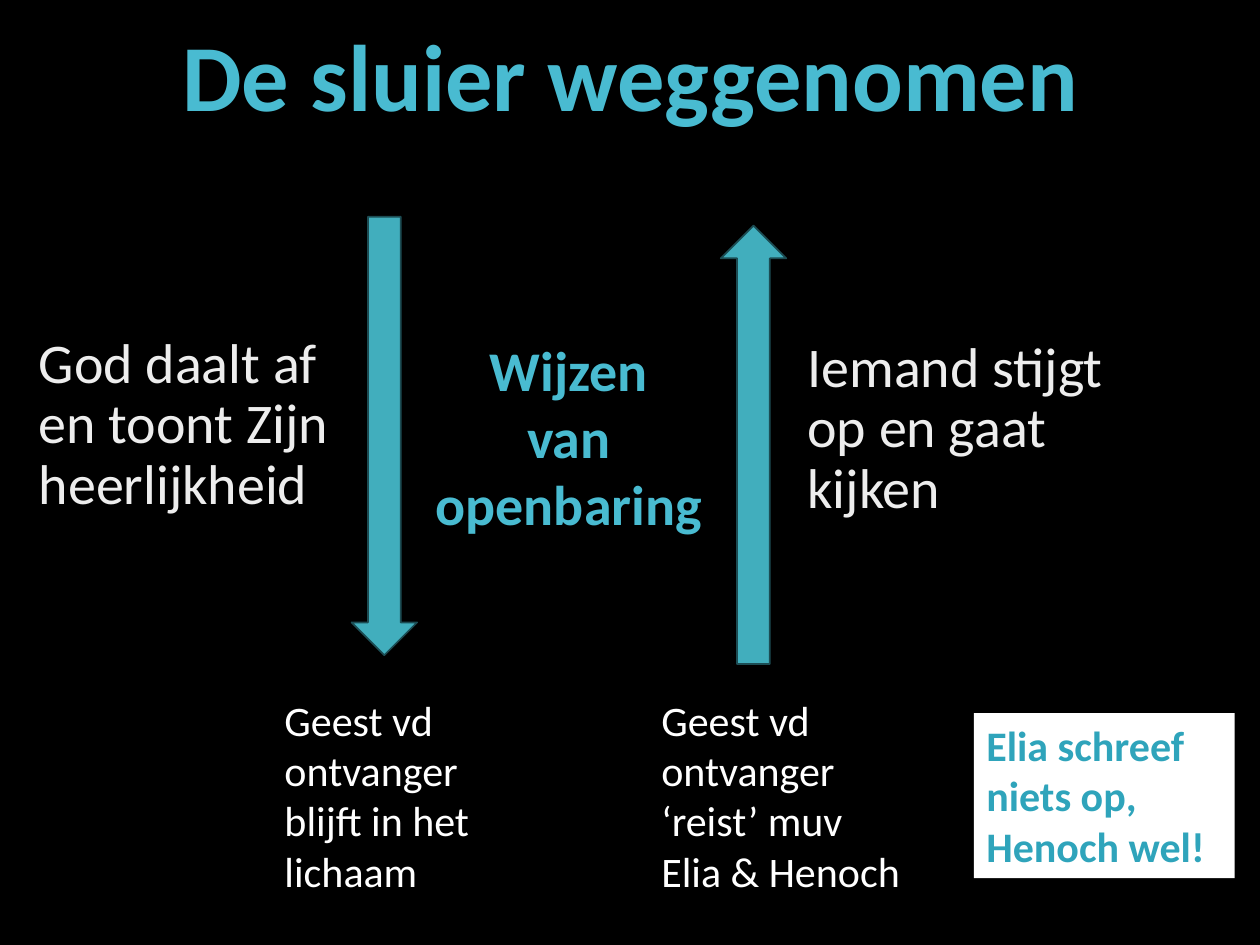
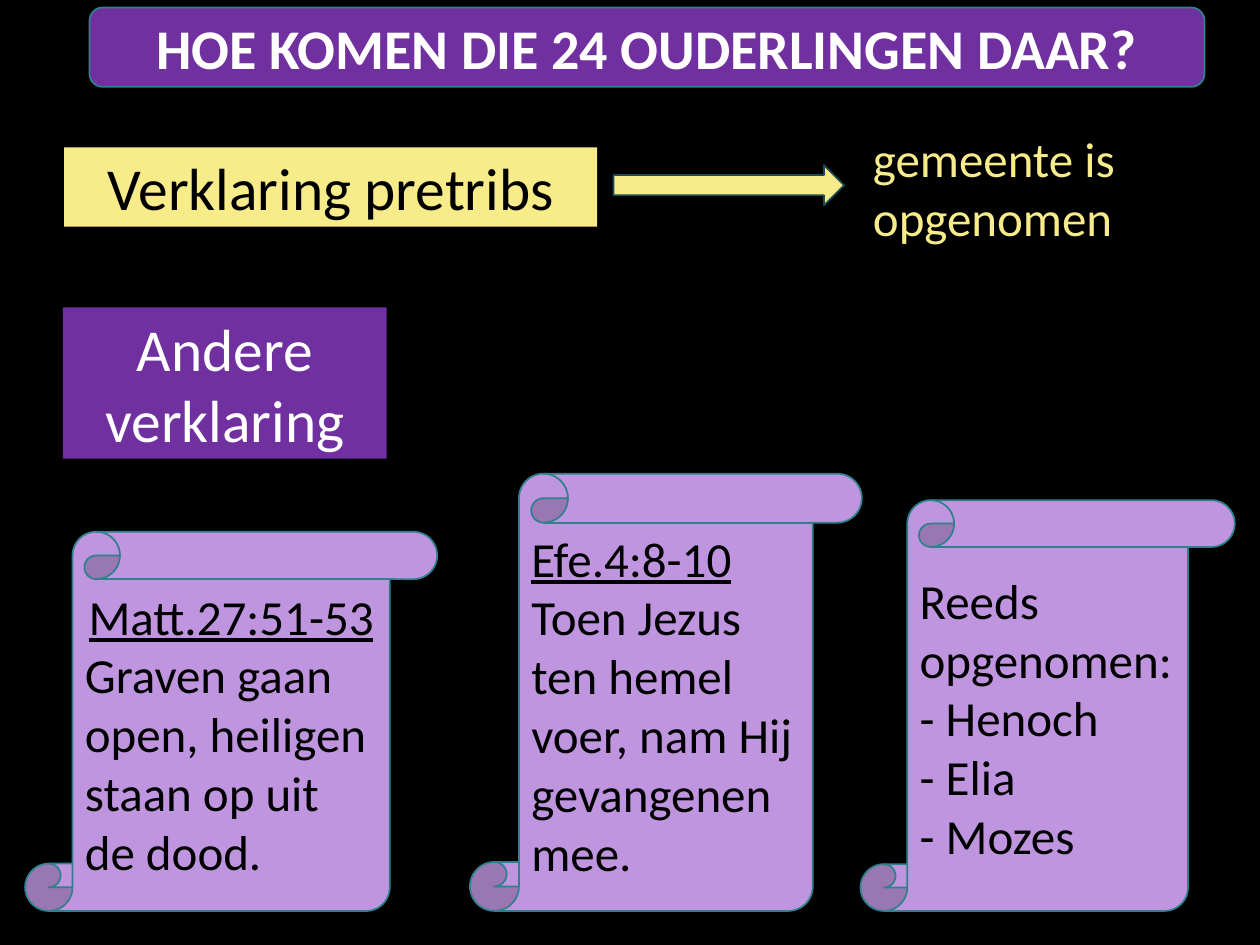
from pptx import Presentation
from pptx.dml.color import RGBColor
from pptx.enum.shapes import MSO_SHAPE as SHAPE
from pptx.enum.text import MSO_ANCHOR, PP_ALIGN
from pptx.util import Inches, Pt

LEFT, CENTER = PP_ALIGN.LEFT, PP_ALIGN.CENTER
TOP, MIDDLE = MSO_ANCHOR.TOP, MSO_ANCHOR.MIDDLE
FONT = "Calibri"
BLACK, WHITE, PALE = "000000", "FFFFFF", "EDEDED"
AQUA, TEAL, DEEP = "49BBD1", "41AEBD", "2FA4BB"
EDGE, RIM = "1C4C53", "30818C"
PURPLE, LILAC, YELLOW = "7030A0", "BF95DF", "F8EB89"

# Places are left, top, width, height in inches.
VEIL = "De sluier weggenomen"
WAYS = [
    ((0.21, 2.61, 2.84, 1.72), ["God daalt af en toont Zijn heerlijkheid"]),
    ((6.31, 2.64, 2.81, 1.78), ["Iemand stijgt op en gaat kijken"]),
]
SPIRITS = [
    ((2.16, 5.46, 1.77, 1.72), ["Geest vd ontvanger blijft in het lichaam"]),
    ((5.15, 5.46, 2.18, 1.72), ["Geest vd ontvanger ‘reist’ muv Elia & Henoch"]),
]
ARROWS = [
    (SHAPE.DOWN_ARROW, (2.79, 1.72, 0.52, 3.48)),
    (SHAPE.UP_ARROW, (5.72, 1.79, 0.52, 3.48)),
]
CORE = ["Wijzen", "van", "openbaring"]
NOTE = ["Elia schreef niets op,", "Henoch wel!"]

ELDERS = "HOE KOMEN DIE 24 OUDERLINGEN DAAR?"
BAND = (0.71, 0.06, 8.85, 0.63)
VIEWS = [
    ((0.51, 1.17, 4.23, 0.63), ["Verklaring pretribs"], YELLOW, BLACK),
    ((0.5, 2.44, 2.57, 1.2), ["Andere verklaring"], PURPLE, WHITE),
]
# Place, verse, alignment of the verse, lines
SCROLLS = [
    ((0.2, 4.22, 3.27, 3.01), "Matt.27:51-53", CENTER,
     ["Graven gaan open, heiligen staan op uit de dood."]),
    ((3.73, 3.76, 3.11, 3.47), "Efe.4:8-10", LEFT,
     ["Toen Jezus ten hemel voer, nam Hij gevangenen mee."]),
    ((6.83, 3.97, 2.97, 3.26), None, LEFT,
     ["Reeds", "opgenomen:", "- Henoch", "- Elia", "- Mozes"]),
]


def rgb(code):
    return RGBColor.from_string(code)


def write(shape, lines, size, color, bold=False, align=LEFT, anchor=TOP,
          space=None, after=0):
    frame = shape.text_frame
    frame.word_wrap = True
    frame.vertical_anchor = anchor
    for i, line in enumerate(lines):
        par = frame.paragraphs[0] if i == 0 else frame.add_paragraph()
        par.alignment = align
        par.space_after = Pt(after)
        if space:
            par.line_spacing = space
        font_run = par.add_run()
        font_run.text = line
        font = font_run.font
        font.name, font.size, font.bold = FONT, Pt(size), bold
        font.color.rgb = rgb(color)
    return shape


def label(slide, place, lines, size, color, **style):
    box = slide.shapes.add_textbox(*map(Inches, place))
    return write(box, lines, size, color, **style)


def draw(slide, kind, place, fill, line=None):
    shape = slide.shapes.add_shape(kind, *map(Inches, place))
    shape.shadow.inherit = False
    shape.fill.solid()
    shape.fill.fore_color.rgb = rgb(fill)
    if line:
        shape.line.color.rgb = rgb(line)
        shape.line.width = Pt(1)
    else:
        shape.line.fill.background()
    return shape


def start(deck):
    """Add a black slide on the title-only layout."""
    slide = deck.slides.add_slide(deck.slide_layouts[5])
    slide.background.fill.solid()
    slide.background.fill.fore_color.rgb = rgb(BLACK)
    return slide


def head(slide, place, text, size, color, **style):
    """Place the title above the shapes drawn so far."""
    title = slide.shapes.title
    title.left, title.top, title.width, title.height = map(Inches, place)
    slide.shapes.element.append(title.element)
    write(title, [text], size, color, bold=True, align=CENTER,
          anchor=MIDDLE, **style)


def veil(deck):
    slide = start(deck)
    head(slide, (0.21, 0.08, 9.59, 1.12), VEIL, 54, AQUA, space=0.9)
    for place, lines in WAYS:
        label(slide, place, lines, 32, PALE, space=0.9)
    for kind, place in ARROWS:
        draw(slide, kind, place, TEAL, EDGE)
    for place, lines in SPIRITS:
        label(slide, place, lines, 24, WHITE)
    label(slide, (3.24, 2.61, 2.55, 1.72), CORE, 32, AQUA, bold=True,
          align=CENTER)
    note = draw(slide, SHAPE.RECTANGLE, (7.73, 5.66, 2.07, 1.31), WHITE)
    write(note, NOTE, 24, DEEP, bold=True)


def elders(deck):
    slide = start(deck)
    draw(slide, SHAPE.ROUNDED_RECTANGLE, BAND, PURPLE, RIM)
    head(slide, BAND, ELDERS, 32, WHITE)
    label(slide, (6.83, 0.97, 2.32, 1.04), ["gemeente is opgenomen"], 28,
          YELLOW, after=10)
    for place, verse, align, lines in SCROLLS:
        scroll = draw(slide, SHAPE.VERTICAL_SCROLL, place, LILAC, RIM)
        text = [verse] + lines if verse else lines
        write(scroll, text, 28, BLACK, anchor=MIDDLE)
        if verse:
            first = scroll.text_frame.paragraphs[0]
            first.alignment = align
            first.runs[0].font.underline = True
    for place, lines, fill, color in VIEWS:
        view = draw(slide, SHAPE.RECTANGLE, place, fill)
        write(view, lines, 34, color, align=CENTER, anchor=MIDDLE, after=10)
    draw(slide, SHAPE.RIGHT_ARROW, (4.87, 1.31, 1.83, 0.32), YELLOW, EDGE)


def main():
    deck = Presentation()
    deck.slide_width, deck.slide_height = Inches(10), Inches(7.5)
    veil(deck)
    elders(deck)
    deck.save("out.pptx")


if __name__ == "__main__":
    main()
